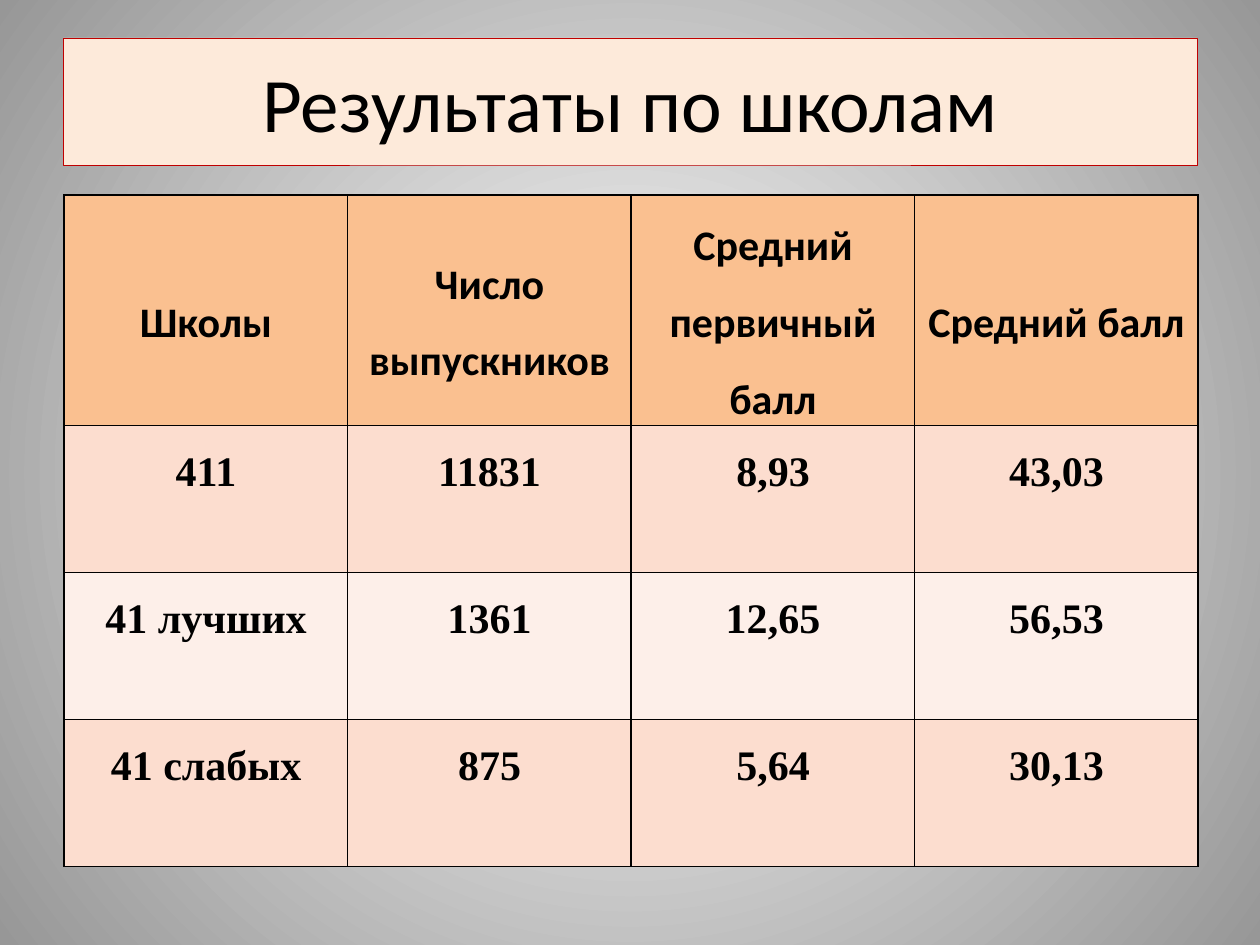
"""Build a slide with a table of average scores by school group."""
from dataclasses import dataclass

from lxml.etree import SubElement as Sub
from pptx import Presentation
from pptx.dml.color import RGBColor as RGB
from pptx.enum.text import MSO_ANCHOR as Anchor, PP_ALIGN as Align
from pptx.oxml.ns import qn
from pptx.slide import Slide
from pptx.table import _Cell as Cell
from pptx.util import Pt

BLACK = RGB(0x00, 0x00, 0x00)
WHITE = RGB(0xFF, 0xFF, 0xFF)
GREY = RGB(0x97, 0x97, 0x97)
RED = RGB(0xC0, 0x00, 0x00)
CREAM = RGB(0xFD, 0xEA, 0xDA)
ORANGE = RGB(0xFA, 0xC0, 0x90)
PINK = RGB(0xFC, 0xDD, 0xCF)
PALE = RGB(0xFD, 0xEF, 0xE9)
SANS = "Calibri"
SERIF = "Times New Roman"


@dataclass
class Row:
    texts: tuple[str, ...]
    fill: RGB
    font: str = SERIF
    anchor: Anchor = Anchor.TOP
    height: float = 84


ROWS = (
    Row(("Школы", "Число выпускников", "Средний первичный балл", "Средний балл"),
        ORANGE, SANS, Anchor.MIDDLE, 62.6),
    Row(("411", "11831", "8,93", "43,03"), PINK),
    Row(("41 лучших", "1361", "12,65", "56,53"), PALE),
    Row(("41 слабых", "875", "5,64", "30,13"), PINK),
)


def paint_back(slide: Slide) -> None:
    """Give the slide a radial gradient from white to grey."""
    fill = slide.background.fill
    fill.gradient()
    for stop, color, place in zip(fill.gradient_stops, (WHITE, GREY), (0, 1)):
        stop.color.rgb = color
        stop.position = place
    line = next(slide.element.iter(qn("a:lin")))
    grad = line.getparent()
    grad.remove(line)
    path = Sub(grad, qn("a:path"), path="circle")
    Sub(path, qn("a:fillToRect"), dict.fromkeys("ltrb", "50000"))


def add_title(slide: Slide, text: str) -> None:
    """Place and format the title."""
    title = slide.shapes.title
    title.left, title.top, title.width, title.height = map(Pt, (36, 21.6, 648, 72.7))
    title.fill.solid()
    title.fill.fore_color.rgb = CREAM
    title.line.color.rgb = RED
    title.line.width = Pt(0.25)
    frame = title.text_frame
    frame.text = text
    frame.vertical_anchor = Anchor.MIDDLE
    para = frame.paragraphs[0]
    para.alignment = Align.CENTER
    font = para.runs[0].font
    font.name, font.size, font.color.rgb = SANS, Pt(44), BLACK


def add_edges(cell: Cell) -> None:
    """Draw the four borders of a cell, ahead of its fill."""
    props = cell._tc.get_or_add_tcPr()
    for spot, side in enumerate(("lnL", "lnR", "lnT", "lnB")):
        edge = Sub(props, qn(f"a:{side}"), w=str(Pt(1)))
        Sub(Sub(edge, qn("a:solidFill")), qn("a:srgbClr"), val=str(BLACK))
        props.insert(spot, edge)


def fill_cell(cell: Cell, text: str, row: Row) -> None:
    """Write and style one cell."""
    cell.text = text
    cell.fill.solid()
    cell.fill.fore_color.rgb = row.fill
    cell.vertical_anchor = row.anchor
    cell.margin_left = cell.margin_right = Pt(5)
    cell.margin_top = cell.margin_bottom = 0
    para = cell.text_frame.paragraphs[0]
    para.alignment = Align.CENTER
    para.line_spacing = 1.5
    font = para.runs[0].font
    font.name, font.size, font.bold = row.font, Pt(24), True
    font.color.rgb = BLACK
    add_edges(cell)


def add_grid(slide: Slide, rows: tuple[Row, ...]) -> None:
    """Add the table of results."""
    high = Pt(381.6)
    frame = slide.shapes.add_table(
        len(rows), len(rows[0].texts), Pt(36.7), Pt(111.5), Pt(648), high)
    table = frame.table
    for line, row in zip(table.rows, rows):
        line.height = Pt(row.height)
        for cell, text in zip(line.cells, row.texts):
            fill_cell(cell, text, row)
    frame.height = high


def main() -> None:
    """Build and save the deck."""
    deck = Presentation()
    deck.slide_width, deck.slide_height = Pt(720), Pt(540)
    slide = deck.slides.add_slide(deck.slide_layouts.get_by_name("Title Only"))
    paint_back(slide)
    add_title(slide, "Результаты по школам")
    add_grid(slide, ROWS)
    deck.save("out.pptx")


if __name__ == "__main__":
    main()
